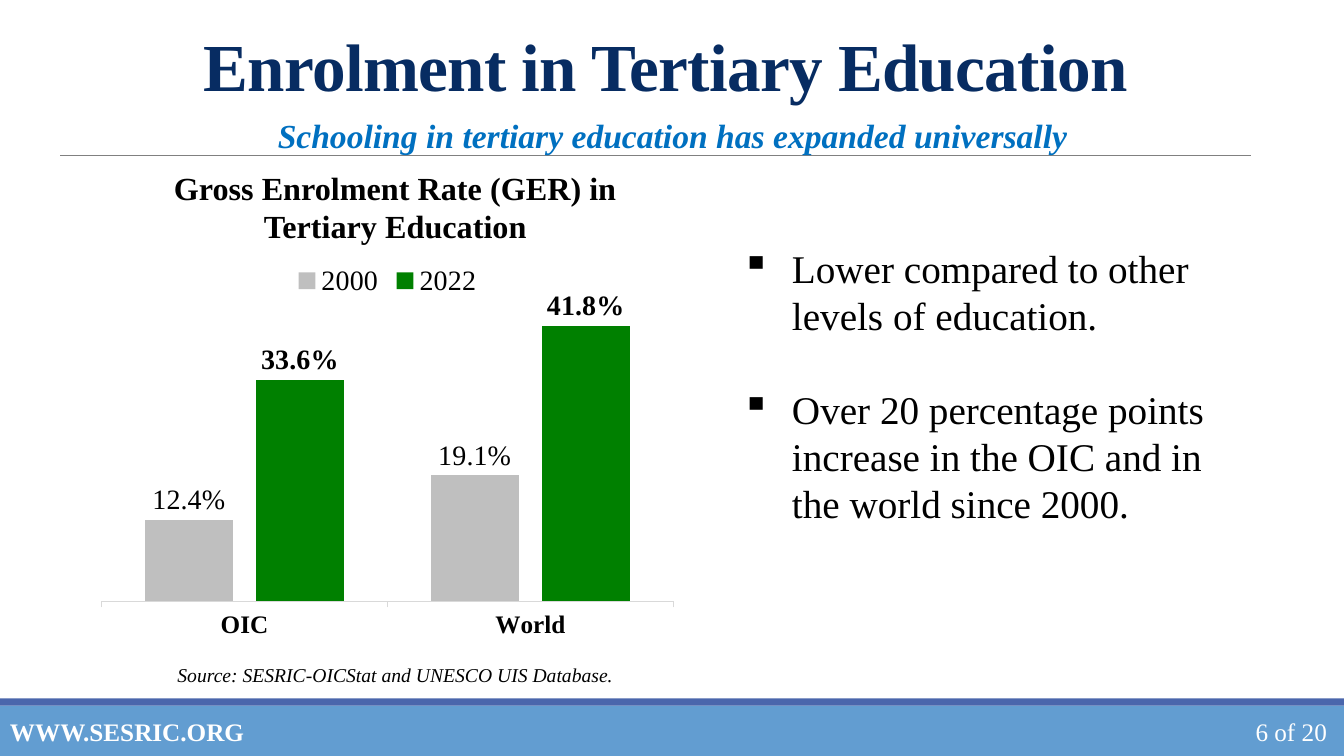
from lxml.etree import SubElement
from pptx import Presentation
from pptx.chart.data import CategoryChartData
from pptx.dml.color import RGBColor
from pptx.enum.chart import XL_CHART_TYPE, XL_LABEL_POSITION, XL_LEGEND_POSITION, XL_TICK_MARK
from pptx.enum.shapes import MSO_CONNECTOR, MSO_SHAPE
from pptx.enum.text import MSO_ANCHOR, MSO_AUTO_SIZE, PP_ALIGN
from pptx.oxml.ns import qn
from pptx.util import Cm, Pt

FONT = "Times New Roman"
NAVY = RGBColor(0x07, 0x2C, 0x62)
BLUE = RGBColor(0x00, 0x70, 0xC0)
BLACK = RGBColor(0x00, 0x00, 0x00)
WHITE = RGBColor(0xFF, 0xFF, 0xFF)
FOOTER_BLUE = RGBColor(0x62, 0x9D, 0xD1)
FOOTER_EDGE = RGBColor(0x4A, 0x66, 0xAC)
RULE_GREY = RGBColor(0x80, 0x80, 0x80)
AXIS_GREY = RGBColor(0xD9, 0xD9, 0xD9)
BAR_GREY = RGBColor(0xBF, 0xBF, 0xBF)
BAR_GREEN = RGBColor(0x00, 0x80, 0x00)


def set_values(target, values):
    for name, value in values.items():
        setattr(target, name, value)


def style_font(font, size, color=BLACK, **values):
    set_values(font, {"name": FONT, "size": Pt(size), **values})
    font.color.rgb = color


def add_band(slide, top, height, color):
    band = slide.shapes.add_shape(MSO_SHAPE.RECTANGLE, 0, Cm(top), Cm(33.87), Cm(height))
    band.shadow.inherit = False
    band.fill.solid()
    band.fill.fore_color.rgb = color
    band.line.fill.background()


def add_rule(slide, left, right, top):
    rule = slide.shapes.add_connector(
        MSO_CONNECTOR.STRAIGHT, Cm(left), Cm(top), Cm(right), Cm(top))
    rule.line.color.rgb = RULE_GREY
    rule.line.width = Pt(0.5)
    SubElement(rule._element.spPr, qn("a:effectLst"))


def fill_title(slide, wording):
    title = slide.shapes.title
    set_values(title, {"left": Cm(2.03), "top": Cm(0.79), "width": Cm(29.49), "height": Cm(1.98)})
    set_values(title.text_frame, {
        "text": wording, "word_wrap": True,
        "auto_size": MSO_AUTO_SIZE.NONE, "vertical_anchor": MSO_ANCHOR.MIDDLE})
    paragraph = title.text_frame.paragraphs[0]
    set_values(paragraph, {"alignment": PP_ALIGN.CENTER, "line_spacing": 0.85})
    run = paragraph.runs[0]
    style_font(run.font, 48, NAVY, bold=True)
    run.font._element.set("spc", "-50")


def add_text(slide, box, wording, size, color=BLACK, align=PP_ALIGN.CENTER,
             anchor=MSO_ANCHOR.TOP, margin_right=0.25, **font_values):
    frame = slide.shapes.add_textbox(*map(Cm, box)).text_frame
    set_values(frame, {"word_wrap": True, "vertical_anchor": anchor,
                       "margin_right": Cm(margin_right)})
    paragraph = frame.paragraphs[0]
    paragraph.alignment = align
    run = paragraph.add_run()
    run.text = wording
    style_font(run.font, size, color, **font_values)


def add_findings(slide, box, findings):
    frame = slide.shapes.add_textbox(*map(Cm, box)).text_frame
    frame.word_wrap = True
    for index, finding in enumerate(findings):
        paragraph = frame.add_paragraph() if index else frame.paragraphs[0]
        properties = paragraph._p.get_or_add_pPr()
        properties.set("marL", str(Cm(1.27)))
        properties.set("indent", str(-Cm(1.27)))
        SubElement(properties, qn("a:buChar"), char="▪")
        if index:
            paragraph.space_before = Pt(33.6)
        run = paragraph.add_run()
        run.text = finding
        style_font(run.font, 28)


def place_plot(chart, **fractions):
    plot_area = chart._chartSpace.chart.plotArea
    for old_layout in plot_area.findall(qn("c:layout")):
        plot_area.remove(old_layout)
    layout = SubElement(plot_area, qn("c:layout"))
    plot_area.insert(0, layout)
    manual = SubElement(layout, qn("c:manualLayout"))
    settings = {"layoutTarget": "inner", "xMode": "edge", "yMode": "edge", **fractions}
    for tag, value in settings.items():
        SubElement(manual, qn(f"c:{tag}"), val=str(value))


def style_series(series, color, bold):
    series.format.fill.solid()
    series.format.fill.fore_color.rgb = color
    series.invert_if_negative = False
    labels = series.data_labels
    set_values(labels, {
        "show_value": True, "number_format": "0.0%", "number_format_is_linked": False,
        "position": XL_LABEL_POSITION.OUTSIDE_END})
    style_font(labels.font, 20, bold=bold)


def add_enrolment_chart(slide, box):
    rates = CategoryChartData(number_format="0.0%")
    rates.categories = ["OIC", "World"]
    rates.add_series("2000", (0.124, 0.191))
    rates.add_series("2022", (0.336, 0.418))
    chart = slide.shapes.add_chart(
        XL_CHART_TYPE.COLUMN_CLUSTERED, *map(Cm, box), rates).chart
    style_font(chart.font, 18)
    set_values(chart, {"has_title": False, "has_legend": True})
    set_values(chart.legend, {"position": XL_LEGEND_POSITION.TOP, "include_in_layout": False})
    style_font(chart.legend.font, 20)
    set_values(chart.value_axis, {
        "visible": False, "has_major_gridlines": False,
        "minimum_scale": 0, "maximum_scale": 0.45})
    regions = chart.category_axis
    regions.major_tick_mark = XL_TICK_MARK.OUTSIDE
    regions.format.line.color.rgb = AXIS_GREY
    regions.format.line.width = Pt(0.75)
    style_font(regions.tick_labels.font, 18, bold=True)
    columns = chart.plots[0]
    set_values(columns, {"gap_width": 100, "overlap": -27, "vary_by_categories": False})
    for series, color, bold in zip(columns.series, (BAR_GREY, BAR_GREEN), (False, True)):
        style_series(series, color, bold)
    place_plot(chart, x=0.02, y=0.13, w=0.96, h=0.73)


def main():
    deck = Presentation()
    set_values(deck, {"slide_width": Cm(33.87), "slide_height": Cm(19.05)})
    slide = deck.slides.add_slide(deck.slide_layouts[5])

    add_band(slide, 17.78, 1.27, FOOTER_BLUE)
    add_band(slide, 17.6, 0.18, FOOTER_EDGE)
    add_rule(slide, 1.52, 31.52, 3.91)
    fill_title(slide, "Enrolment in Tertiary Education")
    add_text(slide, (1.09, 2.77, 31.72, 1.27),
             "Schooling in tertiary education has expanded universally",
             24, BLUE, bold=True, italic=True)
    add_text(slide, (2.69, 16.59, 14.55, 0.86),
             "Source: SESRIC-OICStat and UNESCO UIS Database.", 14, italic=True)
    add_text(slide, (2.69, 4.11, 14.55, 2.24),
             "Gross Enrolment Rate (GER) in Tertiary Education", 23, bold=True)
    add_enrolment_chart(slide, (2.26, 6.35, 15.01, 10.24))
    add_findings(slide, (18.44, 6.02, 12.73, 7.44), (
        "Lower compared to other levels of education.",
        "Over 20 percentage points increase in the OIC and in the world since 2000."))
    add_text(slide, (0, 17.93, 6.55, 1.02), "WWW.SESRIC.ORG", 18, WHITE,
             PP_ALIGN.LEFT, MSO_ANCHOR.MIDDLE, bold=True)
    add_text(slide, (30.23, 17.93, 3.63, 1.02), "6 of 20", 18, WHITE,
             PP_ALIGN.RIGHT, MSO_ANCHOR.MIDDLE, margin_right=0.42)

    deck.save("out.pptx")


if __name__ == "__main__":
    main()
